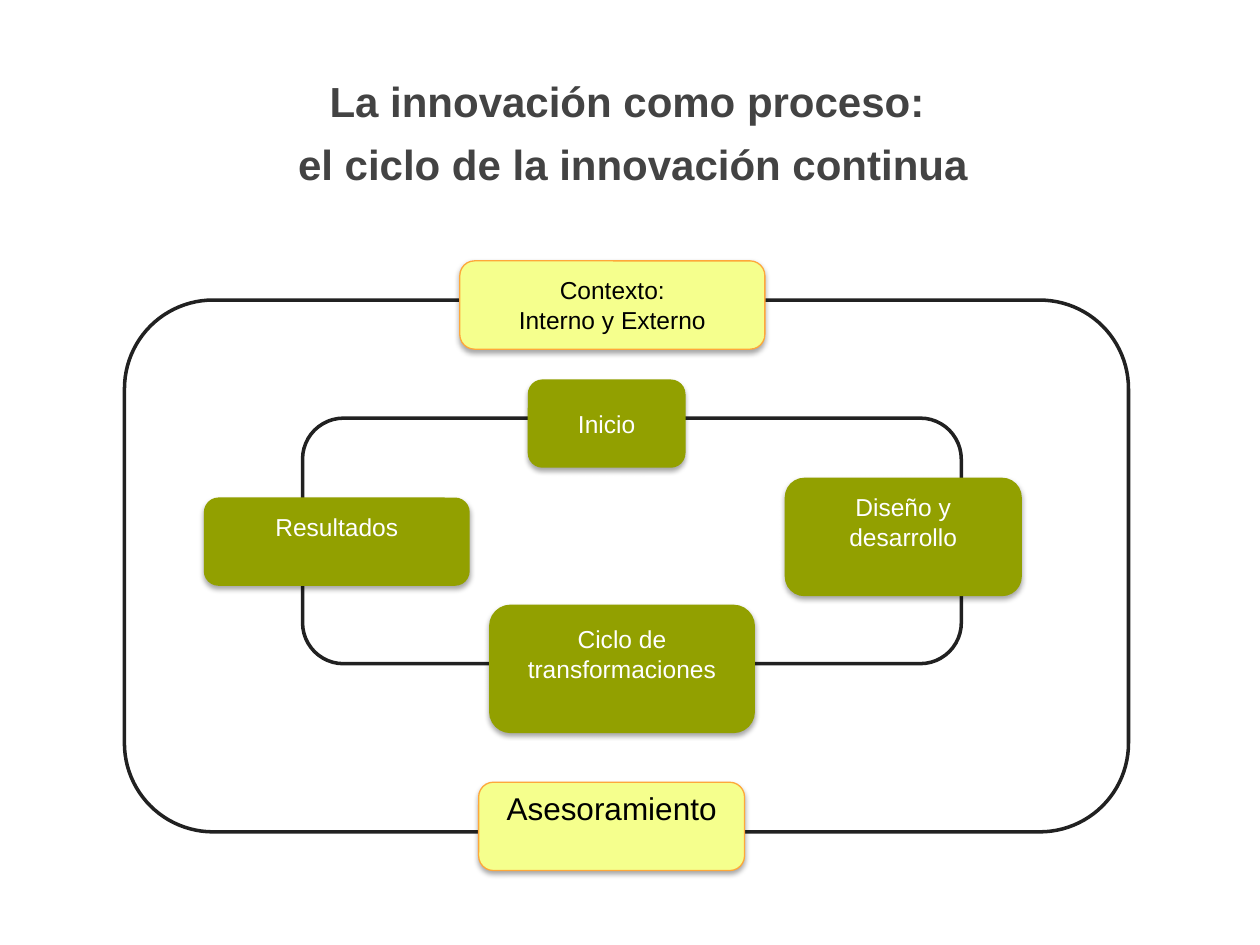
from lxml import etree
from pptx import Presentation
from pptx.dml.color import RGBColor
from pptx.enum.shapes import MSO_SHAPE as SHAPE
from pptx.enum.text import MSO_ANCHOR as ANCHOR, MSO_AUTO_SIZE as AUTO_SIZE, PP_ALIGN as ALIGN
from pptx.oxml.ns import qn
from pptx.util import Cm, Pt

FONT = "Arial"
WHITE = RGBColor(0xFF, 0xFF, 0xFF)
BLACK = RGBColor(0, 0, 0)
GREY = RGBColor(0x43, 0x43, 0x43)
INK = RGBColor(0x21, 0x21, 0x21)
GREEN = RGBColor(0x92, 0xA0, 0x00)
YELLOW = RGBColor(0xF5, 0xFF, 0x8D)
ORANGE = RGBColor(0xFE, 0xA8, 0x3A)

# Stages of the inner cycle: text, left, top, width, height, bottom inset (cm)
STAGES = [
    ("Inicio", 8.13, 1.6, 3.18, 1.78, 0.13),
    ("Resultados", 1.6, 3.98, 5.36, 1.78, 0.73),
    ("Diseño y desarrollo", 13.31, 3.58, 4.78, 2.39, 0.73),
    ("Ciclo de transformaciones", 7.35, 6.14, 5.36, 2.59, 0.73),
]


def write(tf, lines, size, color, bold=False):
    tf.text = "\n".join(lines)
    for p in tf.paragraphs:
        p.alignment = ALIGN.CENTER
        p.font.name, p.font.size, p.font.bold = FONT, Pt(size), bold
        p.font.color.rgb = color


def add_shadow(s):
    effects = s._element.spPr.find(qn("a:effectLst"))
    shadow = etree.SubElement(effects, qn("a:outerShdw"), blurRad=str(Pt(3.1)),
                              dist=str(Pt(1.8)), dir="5400000", rotWithShape="0")
    color = etree.SubElement(shadow, qn("a:srgbClr"), val=str(BLACK))
    etree.SubElement(color, qn("a:alpha"), val="35000")


def add_round_box(slide, box, fill, line=None, line_width=0.75):
    s = slide.shapes.add_shape(SHAPE.ROUNDED_RECTANGLE, *(Cm(v) for v in box))
    s.shadow.inherit = False
    s.fill.solid()
    s.fill.fore_color.rgb = fill
    if line is None:
        s.line.fill.background()
    else:
        s.line.color.rgb = line
        s.line.width = Pt(line_width)
    return s


def add_label(slide, box, lines, fill, color, line=None, size=14, bottom=0.13):
    s = add_round_box(slide, box, fill, line)
    add_shadow(s)
    tf = s.text_frame
    tf.word_wrap = True
    tf.vertical_anchor = ANCHOR.MIDDLE
    tf.margin_bottom = Cm(bottom)
    write(tf, lines, size, color)


def add_title(slide, left, top, width, height):
    s = slide.shapes.title
    s.left, s.top, s.width, s.height = Cm(left), Cm(top), Cm(width), Cm(height)
    tf = s.text_frame
    tf.word_wrap = True
    tf.auto_size = AUTO_SIZE.NONE
    tf.vertical_anchor = ANCHOR.TOP
    tf.margin_left = tf.margin_right = tf.margin_top = tf.margin_bottom = Cm(0.25)
    write(tf, ["La innovación como proceso: ", "el ciclo de la innovación continua"],
          24, GREY, bold=True)
    for p in tf.paragraphs:
        p.line_spacing = 1.05
        p.space_before, p.space_after = Pt(0), Pt(6)


def add_cycle(slide, left, top, width, height):
    def place(x, y, w, h):
        return left + x, top + y, w, h

    # Outer and inner rings
    add_round_box(slide, (left, top, width, height), WHITE, INK, 2)
    add_round_box(slide, place(3.59, 2.38, 13.28, 4.95), WHITE, INK, 2)

    # Context on the outer ring
    add_label(slide, place(6.76, -0.79, 6.15, 1.78),
              ["Contexto:", "Interno y Externo"], YELLOW, BLACK, ORANGE)

    # Stages on the inner ring
    for text, x, y, w, h, bottom in STAGES:
        add_label(slide, place(x, y, w, h), [text], GREEN, WHITE, bottom=bottom)

    # Support on the outer ring
    add_label(slide, place(7.14, 9.72, 5.36, 1.78), ["Asesoramiento"],
              YELLOW, BLACK, ORANGE, size=18, bottom=0.85)


def main():
    prs = Presentation()
    prs.slide_width, prs.slide_height = Cm(25.4), Cm(19.05)
    slide = prs.slides.add_slide(prs.slide_layouts[5])
    add_title(slide, 2.97, 1.22, 19.58, 1.78)
    add_cycle(slide, 2.51, 6.05, 20.24, 10.72)
    prs.save("out.pptx")


if __name__ == "__main__":
    main()
